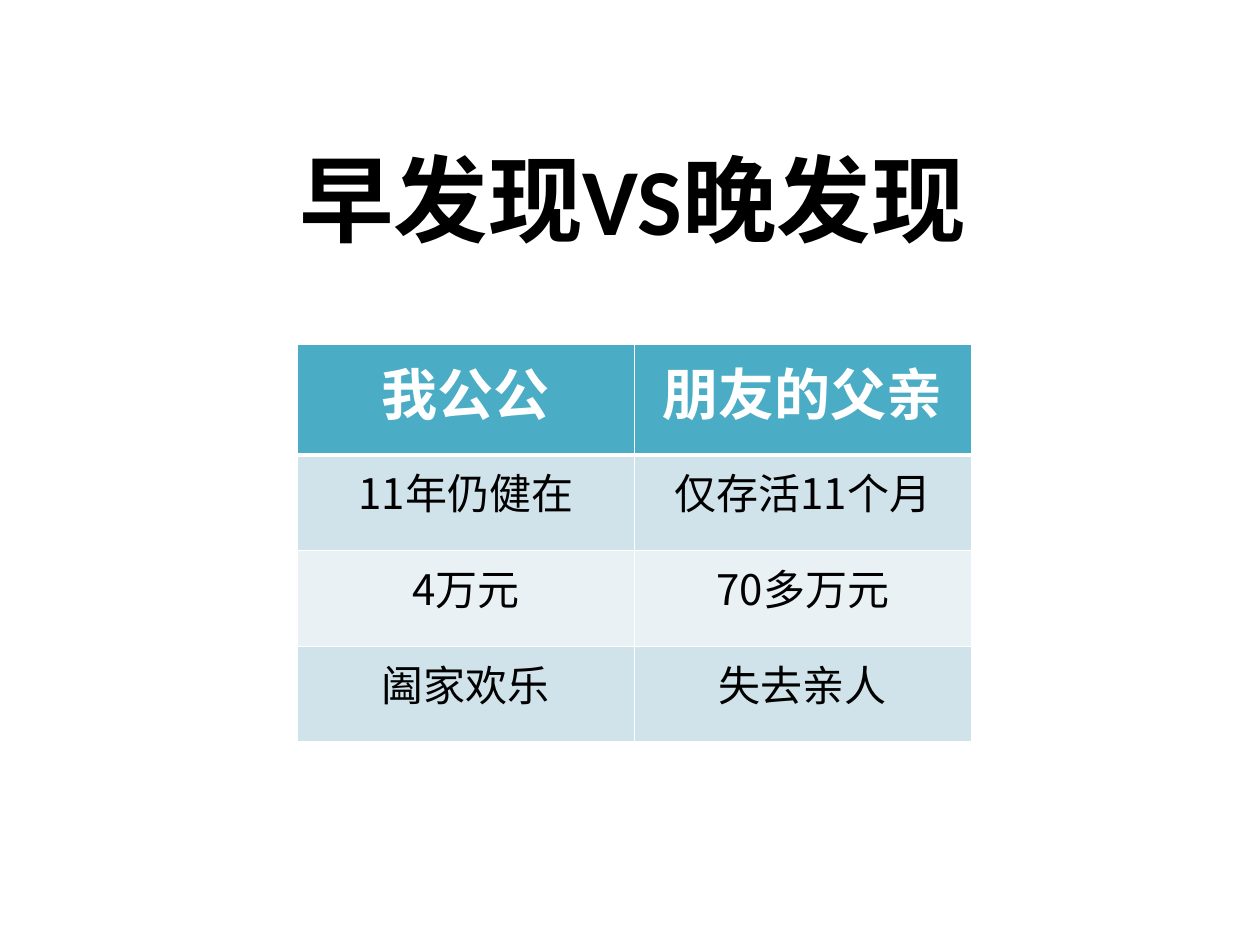
from typing import NamedTuple

from lxml.etree import SubElement
from pptx import Presentation
from pptx.dml.color import RGBColor
from pptx.enum.lang import MSO_LANGUAGE_ID as Language
from pptx.enum.text import MSO_AUTO_SIZE as AutoSize, PP_ALIGN as Align
from pptx.oxml.ns import qn
from pptx.util import Inches, Pt

BLACK = RGBColor(0x00, 0x00, 0x00)
WHITE = RGBColor(0xFF, 0xFF, 0xFF)
TEAL = RGBColor(0x4B, 0xAC, 0xC6)
BAND_DARK = RGBColor(0xD0, 0xE3, 0xEA)
BAND_LIGHT = RGBColor(0xE9, 0xF1, 0xF5)
LATIN_FONT = "Calibri"
CHINESE_FONT = "Noto Sans CJK SC"


class TextStyle(NamedTuple):
    size: int
    color: RGBColor
    font: str
    bold: bool = False


class TableRow(NamedTuple):
    texts: tuple[str, str]
    height: float
    fill: RGBColor
    style: TextStyle
    top_line: int = 1
    bottom_line: int = 1


TITLE = TextStyle(54, BLACK, LATIN_FONT, True)
HEADER = TextStyle(32, WHITE, CHINESE_FONT, True)
BODY = TextStyle(24, BLACK, CHINESE_FONT)
ROWS = (
    TableRow(("我公公", "朋友的父亲"), 0.88, TEAL, HEADER, bottom_line=3),
    TableRow(("11年仍健在", "仅存活11个月"), 0.76, BAND_DARK, BODY, top_line=3),
    TableRow(("4万元", "70多万元"), 0.76, BAND_LIGHT, BODY),
    TableRow(("阖家欢乐", "失去亲人"), 0.76, BAND_DARK, BODY),
)


def write_text(text_frame, text: str, style: TextStyle) -> None:
    paragraph = text_frame.paragraphs[0]
    paragraph.alignment = Align.CENTER
    run = paragraph.add_run()
    run.text = text
    font = run.font
    font.size = Pt(style.size)
    font.bold = style.bold
    font.color.rgb = style.color
    font.name = style.font
    font.language_id = Language.SIMPLIFIED_CHINESE
    if style.font == CHINESE_FONT:
        SubElement(run._r.get_or_add_rPr(), qn("a:ea"), typeface=CHINESE_FONT)


def add_borders(cell, row: TableRow) -> None:
    properties = cell._tc.get_or_add_tcPr()
    widths = {"L": 1, "R": 1, "T": row.top_line, "B": row.bottom_line}
    for side, width in widths.items():
        line = SubElement(properties, qn(f"a:ln{side}"), w=str(Pt(width)))
        fill = SubElement(line, qn("a:solidFill"))
        SubElement(fill, qn("a:srgbClr"), val=str(WHITE))


def add_title(slide) -> None:
    title = slide.shapes.add_textbox(Inches(0.49), Inches(1.07), Inches(9.06), Inches(1.01))
    title.text_frame.word_wrap = True
    title.text_frame.auto_size = AutoSize.SHAPE_TO_FIT_TEXT
    write_text(title.text_frame, "早发现VS晚发现", TITLE)


def add_comparison(slide) -> None:
    height = sum(row.height for row in ROWS)
    table = slide.shapes.add_table(
        len(ROWS), 2, Inches(2.36), Inches(2.73), Inches(5.35), Inches(height)
    ).table
    for row_index, row in enumerate(ROWS):
        table.rows[row_index].height = Inches(row.height)
        for column_index, text in enumerate(row.texts):
            cell = table.cell(row_index, column_index)
            add_borders(cell, row)
            cell.fill.solid()
            cell.fill.fore_color.rgb = row.fill
            write_text(cell.text_frame, text, row.style)


def main() -> None:
    """Build the slide comparing early and late detection."""
    presentation = Presentation()
    presentation.slide_width = Inches(10)
    presentation.slide_height = Inches(7.5)
    slide = presentation.slides.add_slide(presentation.slide_layouts[6])
    add_title(slide)
    add_comparison(slide)
    presentation.save("out.pptx")


if __name__ == "__main__":
    main()
